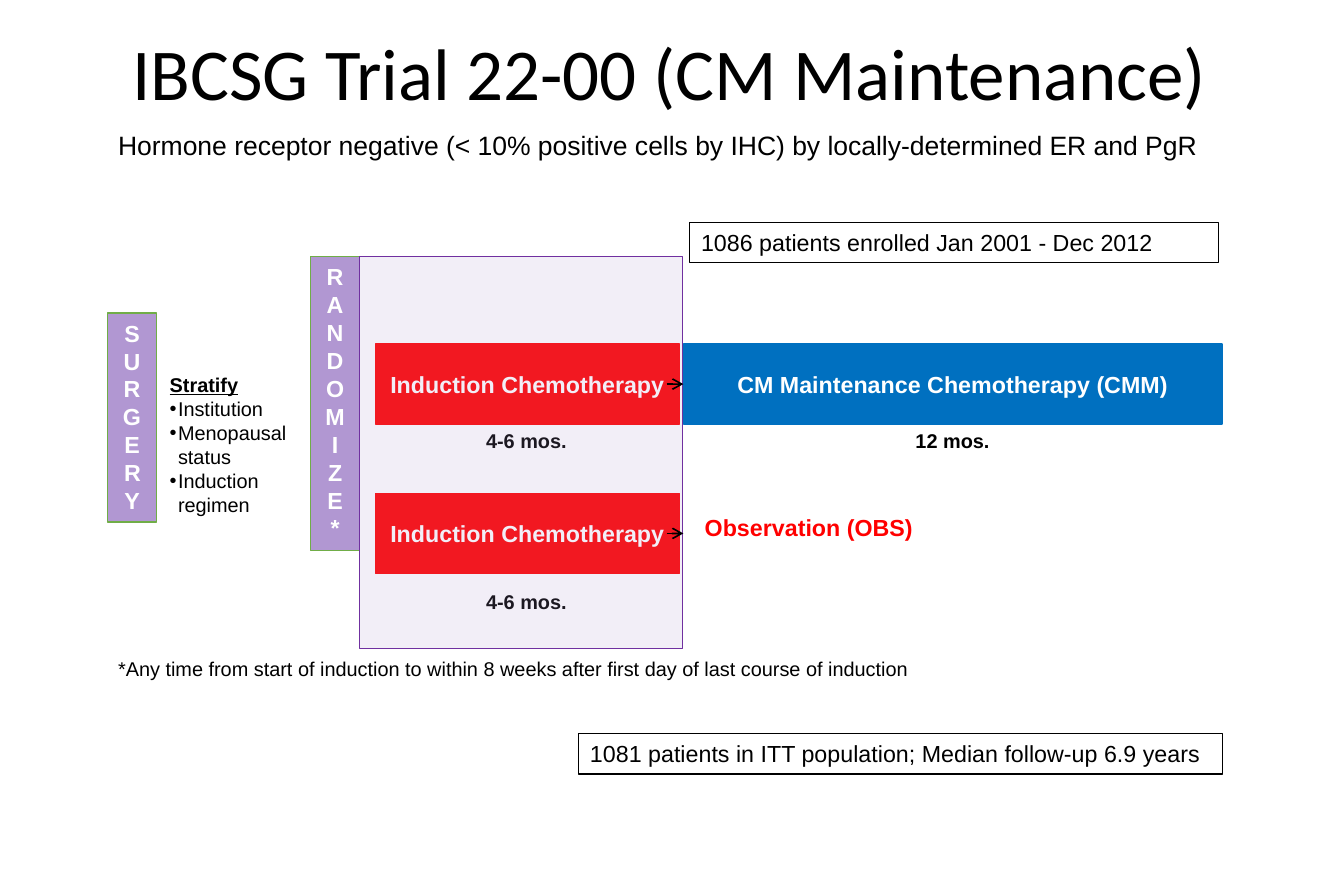
from lxml.etree import SubElement
from pptx import Presentation
from pptx.dml.color import RGBColor
from pptx.enum.shapes import MSO_CONNECTOR, MSO_SHAPE
from pptx.enum.text import MSO_ANCHOR, MSO_AUTO_SIZE, PP_ALIGN
from pptx.oxml.ns import qn
from pptx.util import Inches, Pt

BLACK = RGBColor(0x00, 0x00, 0x00)
WHITE = RGBColor(0xFF, 0xFF, 0xFF)
RED = RGBColor(0xFF, 0x00, 0x00)
BLUE = RGBColor(0x00, 0x70, 0xC0)
LILAC = RGBColor(0xB1, 0x97, 0xD2)
GREEN = RGBColor(0x70, 0xAD, 0x47)
PURPLE = RGBColor(0x70, 0x30, 0xA0)


def place(shape, box):
    """Move a shape to a box given in inches."""
    shape.left, shape.top, shape.width, shape.height = map(Inches, box)


def write(shape, lines, size, color=BLACK, bold=False, align=PP_ALIGN.LEFT,
          anchor=MSO_ANCHOR.TOP, wrap=True, face="Arial"):
    """Fill a shape with evenly formatted paragraphs."""
    frame = shape.text_frame
    frame.text = "\n".join(lines)
    frame.auto_size = MSO_AUTO_SIZE.NONE
    frame.word_wrap = wrap
    frame.vertical_anchor = anchor
    for para in frame.paragraphs:
        para.alignment = align
        para.space_before = Pt(0)
        font = para.font
        font.name, font.size, font.bold = face, Pt(size), bold
        font.color.rgb = color
    return frame.paragraphs


def label(slide, box, text, size, **style):
    """Add a plain text box."""
    write(slide.shapes.add_textbox(*map(Inches, box)), [text], size, **style)


def block(slide, box, fill, line, width=0.75):
    """Add a rectangle, unfilled when fill is None."""
    rect = slide.shapes.add_shape(MSO_SHAPE.RECTANGLE, *map(Inches, box))
    rect.shadow.inherit = False
    if fill is None:
        rect.fill.background()
    else:
        rect.fill.solid()
        rect.fill.fore_color.rgb = fill
    rect.line.color.rgb = line
    rect.line.width = Pt(width)
    return rect


def phase(slide, box, text, color):
    """Add a treatment bar with centred white text."""
    rect = block(slide, box, color, color)
    write(rect, [text], 14, WHITE, True, PP_ALIGN.CENTER, MSO_ANCHOR.MIDDLE)
    return rect


def tower(slide, box, lines):
    """Add a narrow bar whose letters wrap one per line."""
    write(block(slide, box, LILAC, GREEN), lines, 14, WHITE, True, PP_ALIGN.CENTER)


def note(slide, box, text):
    """Add an outlined patient count."""
    write(block(slide, box, None, BLACK), [text], 14)


def arrow(slide, x, y, end):
    """Add a short arrow, joined to the left side of end if given."""
    line = slide.shapes.add_connector(
        MSO_CONNECTOR.STRAIGHT, *map(Inches, (x, y, x + 0.14, y)))
    if end is not None:
        line.end_connect(end, 1)
    line.line.color.rgb = BLACK
    line.line.width = Pt(1)
    SubElement(line.line._get_or_add_ln(), qn("a:tailEnd"), type="arrow")
    SubElement(line._element.spPr, qn("a:effectLst"))


def head(slide, box):
    """Place the title and the line below it."""
    x, y, w, h = box
    title = slide.shapes.title
    place(title, (x, y, w, 1.01))
    para, = write(title, ["IBCSG Trial 22-00 (CM Maintenance)"], 44,
                  align=PP_ALIGN.CENTER, anchor=MSO_ANCHOR.MIDDLE, face="Calibri")
    para.line_spacing = 0.9
    label(slide, (x + 0.05, y + h - 0.37, w - 0.05, 0.37),
          "Hormone receptor negative (< 10% positive cells by IHC) "
          "by locally-determined ER and PgR", 16)


def strata(slide, box):
    """Place the list of stratification factors."""
    body = slide.placeholders[1]
    place(body, box)
    paras = write(body, ["Stratify", "Institution", "Menopausal status",
                         "Induction regimen"], 12)
    paras[0].font.bold = paras[0].font.underline = True
    for i, para in enumerate(paras):
        props = para._p.get_or_add_pPr()
        dent = Inches(0.07) if i else 0
        props.set("marL", str(dent))
        props.set("indent", str(-dent))
        if i:
            SubElement(props, qn("a:buChar"), char="•")
        else:
            SubElement(props, qn("a:buNone"))
        font = props.find(qn("a:defRPr"))
        if font is not None:
            props.append(font)


def entry(slide, box):
    """Place surgery, the strata and the randomization bar."""
    x, y, w, h = box
    bar = 0.41
    tower(slide, (x, y + 0.47, bar, 1.75), ["SURGERY"])
    strata(slide, (x + 0.42, y + 0.92, 1.27, 1.31))
    tower(slide, (x + w - bar, y, bar, h), ["RANDOMI", "ZE", "*"])


def arms(slide, box):
    """Place both arms, the veil over induction and the arrows."""
    x, y, w, h = box
    tall, veil = 0.67, 2.7
    tops = (y + 0.73, y + 1.98)
    split = x + veil + 0.01
    rest = x + w - split
    care = phase(slide, (split, tops[0], rest, tall),
                 "CM Maintenance Chemotherapy (CMM)", BLUE)
    label(slide, (split + rest / 2 - 0.41, tops[0] + 0.66, 0.83, 0.3),
          "12 mos.", 12, bold=True, wrap=False)
    label(slide, (split + 0.08, tops[1] + 0.12, 2.32, 0.34),
          "Observation (OBS)", 14, color=RED, bold=True)
    for top, gap in zip(tops, (0.66, 0.76)):
        phase(slide, (x + 0.13, top, 2.55, tall), "Induction Chemotherapy", RED)
        label(slide, (x + 0.96, top + gap, 0.88, 0.3),
              "4-6 mos.", 12, bold=True, wrap=False)
    cover = block(slide, (x, y, veil, h), LILAC, PURPLE, 0.5)
    tint = cover._element.spPr.find(qn("a:solidFill"))[0]
    SubElement(tint, qn("a:alpha"), val="16000")
    for top, end in zip(tops, (care, None)):
        arrow(slide, split - 0.14, top + tall / 2, end)


def main():
    """Build and save the slide."""
    deck = Presentation()
    deck.slide_width, deck.slide_height = Inches(11.25), Inches(7.5)
    slide = deck.slides.add_slide(deck.slide_layouts[1])
    head(slide, (0.84, 0.14, 9.54, 1.26))
    note(slide, (5.77, 1.86, 4.43, 0.34), "1086 patients enrolled Jan 2001 - Dec 2012")
    entry(slide, (0.9, 2.15, 2.11, 2.46))
    arms(slide, (3.01, 2.15, 7.22, 3.28))
    label(slide, (0.89, 5.45, 6.87, 0.3),
          "*Any time from start of induction to within 8 weeks "
          "after first day of last course of induction", 12)
    note(slide, (4.84, 6.14, 5.39, 0.34),
         "1081 patients in ITT population; Median follow-up 6.9 years")
    deck.save("out.pptx")


if __name__ == "__main__":
    main()
